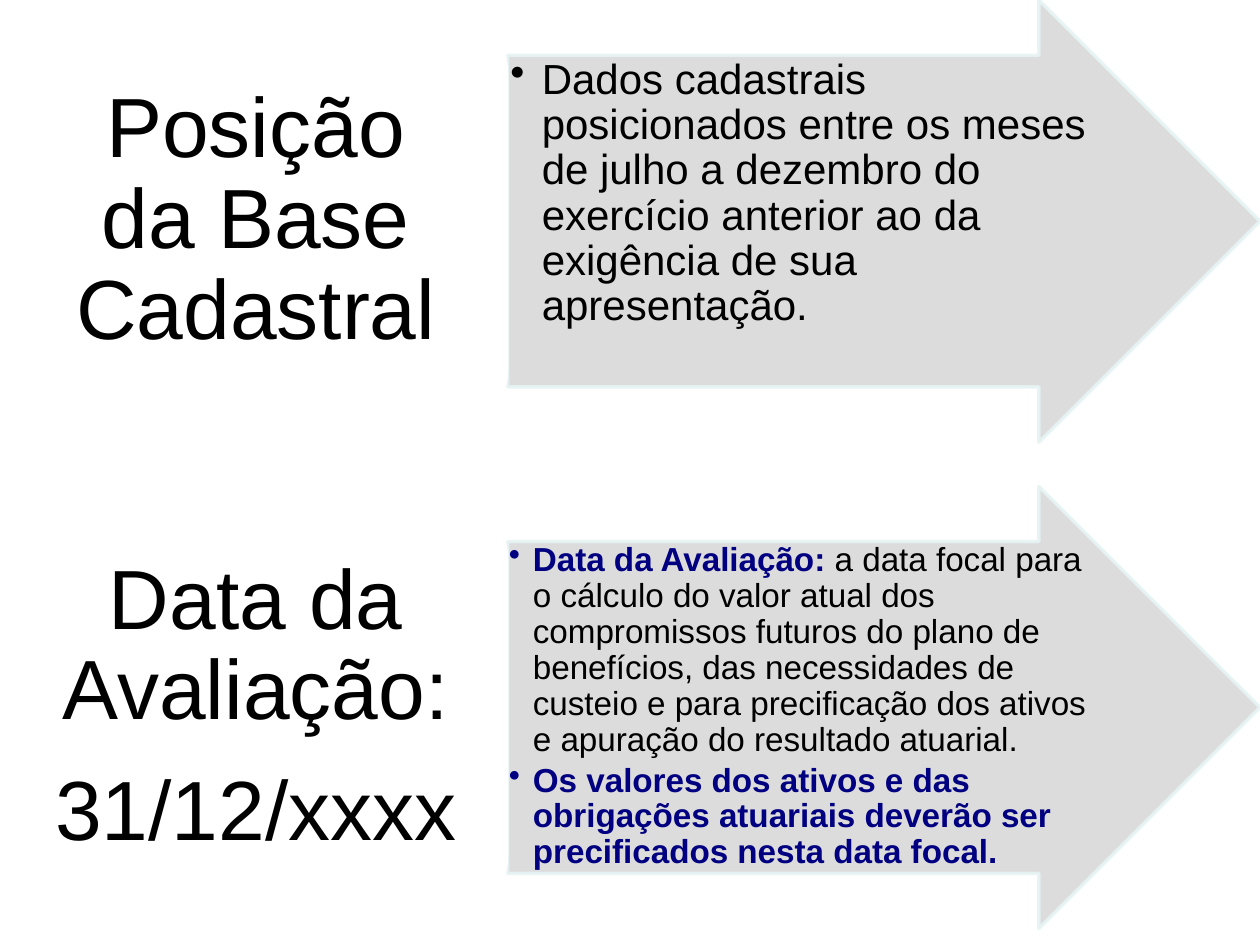
from dataclasses import dataclass

from lxml import etree
from pptx import Presentation
from pptx.dml.color import RGBColor
from pptx.enum.shapes import MSO_SHAPE
from pptx.enum.text import MSO_ANCHOR, PP_ALIGN
from pptx.oxml.ns import qn
from pptx.util import Inches, Pt

ARROW = MSO_SHAPE.RIGHT_ARROW
ROUNDED = MSO_SHAPE.ROUNDED_RECTANGLE
TOP, MIDDLE = MSO_ANCHOR.TOP, MSO_ANCHOR.MIDDLE
LEFT, CENTER = PP_ALIGN.LEFT, PP_ALIGN.CENTER


@dataclass(frozen=True)
class Theme:
    font: str = "Arial"
    heading_size: int = 48
    text: RGBColor = RGBColor(0x00, 0x00, 0x00)
    accent: RGBColor = RGBColor(0x00, 0x00, 0x80)
    card: RGBColor = RGBColor(0xFF, 0xFF, 0xFF)
    arrow: RGBColor = RGBColor(0xD9, 0xD9, 0xD9)
    arrow_edge: RGBColor = RGBColor(0xE7, 0xF3, 0xF4)
    edge_width: int = 2
    arrow_opacity: int = 90


CARD_LEFT, CARD_WIDTH = 0.04, 3.98
ARROW_LEFT, ARROW_WIDTH = 4.03, 5.97
ROW_HEIGHT, ROW_PITCH = 3.51, 3.86

# Each detail paragraph is a list of (text, emphasised) runs.
ROWS = [
    dict(
        heading=["Posição da Base Cadastral"],
        details=[[("Dados cadastrais posicionados entre os meses de julho a dezembro "
                   "do exercício anterior ao da exigência de sua apresentação.", False)]],
        size=24, indent=0.25, inset=0.02,
    ),
    dict(
        heading=["Data da Avaliação:", "31/12/xxxx"],
        details=[
            [("Data da Avaliação: ", True),
             ("a data focal para o cálculo do valor atual dos compromissos futuros "
              "do plano de benefícios, das necessidades de custeio e para precificação "
              "dos ativos e apuração do resultado atuarial.", False)],
            [("Os valores dos ativos e das obrigações atuariais deverão ser "
              "precificados nesta data focal.", True)],
        ],
        size=19, indent=0.19, inset=0.01,
    ),
]


def set_opacity(fill, percent):
    for color in fill.iter(qn("a:srgbClr")):
        etree.SubElement(color, qn("a:alpha"), val=str(percent * 1000))


def add_bullet(paragraph, indent):
    properties = paragraph._p.get_or_add_pPr()
    properties.set("marL", str(Inches(indent)))
    properties.set("indent", str(-Inches(indent)))
    etree.SubElement(properties, qn("a:buChar"), char="•")


class SlideBuilder:
    def __init__(self, slide, theme):
        self.slide = slide
        self.theme = theme

    def block(self, preset, left, top, width, fill, edge, anchor, inset_x, inset_y):
        shape = self.slide.shapes.add_shape(
            preset, Inches(left), Inches(top), Inches(width), Inches(ROW_HEIGHT))
        shape.shadow.inherit = False
        shape.fill.solid()
        shape.fill.fore_color.rgb = fill
        shape.line.color.rgb = edge
        shape.line.width = Pt(self.theme.edge_width)
        frame = shape.text_frame
        frame.word_wrap = True
        frame.vertical_anchor = anchor
        frame.margin_left = frame.margin_right = Inches(inset_x)
        frame.margin_top = frame.margin_bottom = Inches(inset_y)
        return shape

    def paragraph(self, frame, index, size, align, gap):
        """Return a styled paragraph; gap is the space after, as a share of the type size."""
        paragraph = frame.paragraphs[0] if index == 0 else frame.add_paragraph()
        paragraph.alignment = align
        paragraph.line_spacing = 0.9
        paragraph.space_after = Pt(size * gap)
        return paragraph

    def style_font(self, font, size, color):
        font.name = self.theme.font
        font.size = Pt(size)
        font.color.rgb = color

    def heading_card(self, top, lines):
        theme = self.theme
        card = self.block(ROUNDED, CARD_LEFT, top, CARD_WIDTH, theme.card, theme.card,
                          MIDDLE, 0.2, 0.1)
        for index, line in enumerate(lines):
            paragraph = self.paragraph(card.text_frame, index, theme.heading_size, CENTER, 0.35)
            paragraph.text = line
            self.style_font(paragraph.font, theme.heading_size, theme.text)

    def detail_arrow(self, top, details, size, indent, inset):
        theme = self.theme
        arrow = self.block(ARROW, ARROW_LEFT, top, ARROW_WIDTH, theme.arrow,
                           theme.arrow_edge, TOP, inset, inset)
        arrow.adjustments[0] = 0.75
        arrow.adjustments[1] = 0.5
        set_opacity(arrow._element.spPr, theme.arrow_opacity)
        for index, runs in enumerate(details):
            paragraph = self.paragraph(arrow.text_frame, index, size, LEFT, 0.15)
            paragraph.level = 1
            add_bullet(paragraph, indent)
            for text, emphasised in runs:
                run = paragraph.add_run()
                run.text = text
                run.font.bold = emphasised
                self.style_font(run.font, size, theme.accent if emphasised else theme.text)


def main():
    presentation = Presentation()
    presentation.slide_width, presentation.slide_height = Inches(10), Inches(7.5)
    blank_layout = presentation.slide_layouts[6]
    builder = SlideBuilder(presentation.slides.add_slide(blank_layout), Theme())
    for index, row in enumerate(ROWS):
        top = index * ROW_PITCH
        builder.detail_arrow(top, row["details"], row["size"], row["indent"], row["inset"])
        builder.heading_card(top, row["heading"])
    presentation.save("out.pptx")


if __name__ == "__main__":
    main()
